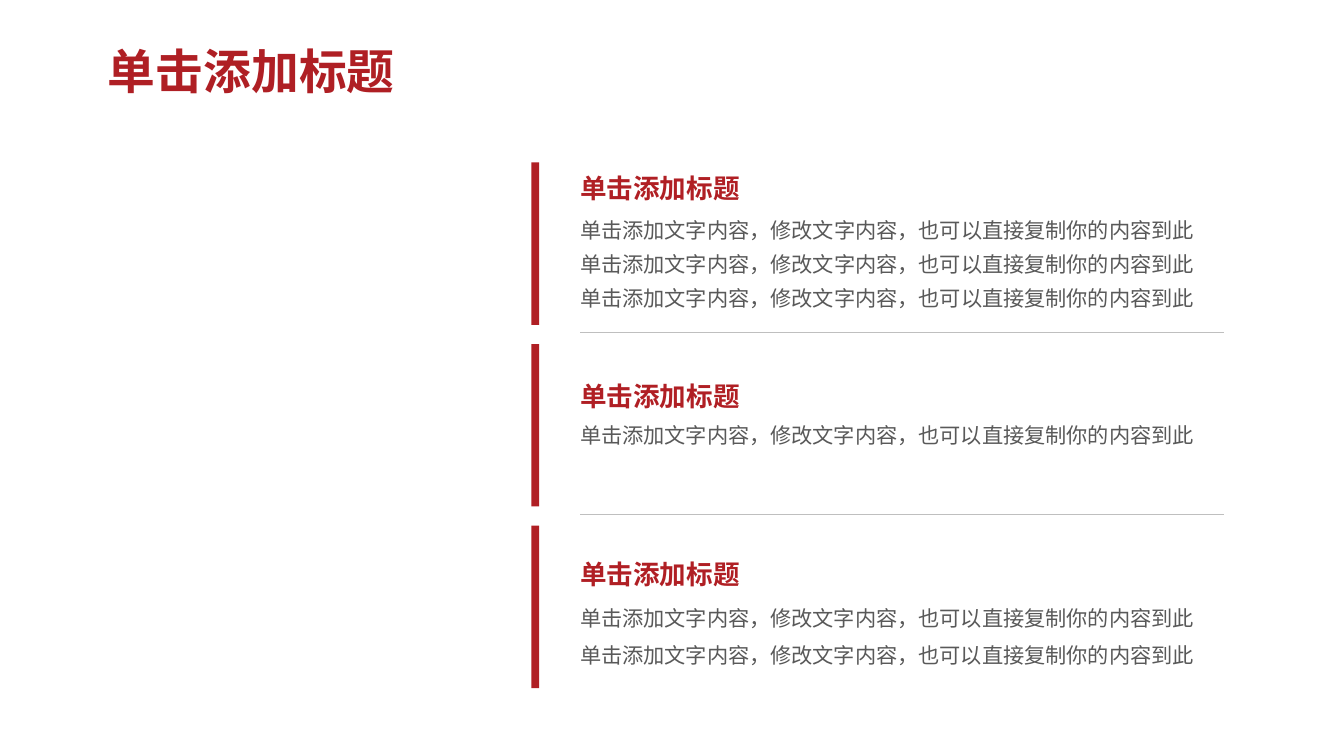
from collections import namedtuple

from lxml.etree import SubElement
from pptx import Presentation
from pptx.dml.color import RGBColor
from pptx.enum.shapes import MSO_CONNECTOR as Connector, MSO_SHAPE as Shape
from pptx.enum.text import MSO_ANCHOR as Anchor, MSO_AUTO_SIZE as AutoSize
from pptx.oxml.ns import qn
from pptx.util import Pt

TITLE_RED = RGBColor(0xAF, 0x1F, 0x24)
RED = RGBColor(0xB0, 0x1F, 0x24)
GREY = RGBColor(0x59, 0x59, 0x59)
RULE_GREY = RGBColor(0xBF, 0xBF, 0xBF)
FONT = "Noto Sans CJK SC"

HEADING = "单击添加标题"
BODY = "单击添加文字内容，修改文字内容，也可以直接复制你的内容到此"

TITLE_FORMAT = {"size": Pt(36), "bold": True}
HEADING_FORMAT = {"size": Pt(20), "bold": True}
BODY_FORMAT = {"size": Pt(16), "bold": False}

# All lengths in points
Box = namedtuple("Box", "left top width height")
# Offsets are measured from the top of the section
Section = namedtuple("Section", "heading_top body_top lines step width height spacing")

TITLE_BOX = Box(81.36, 30.96, 249.12, 43.92)
FIRST_BOX = Box(400.32, 122.4, 521.28, 122.4)
SECTION_PITCH = 136.8
SECTIONS = [
    Section(-1.44, 37.44, 3, 25.92, 524.16, 26.64, None),
    Section(18.72, 55.44, 1, 0, 484.56, 26.64, None),
    Section(15.84, 52.56, 2, 28.08, 501.84, 28.8, 1.2),
]
BAR_WIDTH = 5.76
TEXT_INDENT = 29.52
RULE_INDENT = 36.72
RULE_OFFSET = 128.16


def add_text(page, box, text, formats, colour, spacing=None, wrap=True):
    frame = page.shapes.add_textbox(*map(Pt, box)).text_frame
    frame.word_wrap = wrap
    frame.auto_size = AutoSize.SHAPE_TO_FIT_TEXT
    para = frame.paragraphs[0]
    if spacing:
        para.line_spacing = spacing
    span = para.add_run()
    span.text = text
    for name, value in formats.items():
        setattr(span.font, name, value)
    span.font.color.rgb = colour
    span.font.name = FONT
    # East Asian typeface
    SubElement(span.font._element, qn("a:ea")).set("typeface", FONT)
    return frame


def add_title(page, box):
    frame = add_text(page, box, HEADING, TITLE_FORMAT, TITLE_RED)
    frame.vertical_anchor = Anchor.MIDDLE
    for side in ("left", "top", "right", "bottom"):
        setattr(frame, f"margin_{side}", 0)


def add_section(page, box, section):
    # Red bar
    bar = page.shapes.add_shape(
        Shape.RECTANGLE, Pt(box.left), Pt(box.top), Pt(BAR_WIDTH), Pt(box.height))
    bar.shadow.inherit = False
    bar.fill.solid()
    bar.fill.fore_color.rgb = RED
    bar.line.fill.background()

    # Heading and body lines
    left = box.left + TEXT_INDENT
    heading_box = Box(left, box.top + section.heading_top, 135.36, 33.84)
    add_text(page, heading_box, HEADING, HEADING_FORMAT, RED, 1.2, wrap=False)
    for index in range(section.lines):
        top = box.top + section.body_top + index * section.step
        body_box = Box(left, top, section.width, section.height)
        add_text(page, body_box, BODY, BODY_FORMAT, GREY, section.spacing)


def add_rule(page, box):
    top = Pt(box.top + RULE_OFFSET)
    rule = page.shapes.add_connector(
        Connector.STRAIGHT, Pt(box.left + RULE_INDENT), top, Pt(box.left + box.width), top)
    rule.line.color.rgb = RULE_GREY
    rule.line.width = Pt(0.5)
    SubElement(rule._element.spPr, qn("a:effectLst"))


def main():
    deck = Presentation()
    deck.slide_width, deck.slide_height = Pt(1012.32), Pt(569.52)
    page = deck.slides.add_slide(deck.slide_layouts[6])

    add_title(page, TITLE_BOX)
    for index, section in enumerate(SECTIONS):
        box = FIRST_BOX._replace(top=FIRST_BOX.top + index * SECTION_PITCH)
        add_section(page, box, section)
        if index < len(SECTIONS) - 1:
            add_rule(page, box)

    deck.save("out.pptx")


if __name__ == "__main__":
    main()
